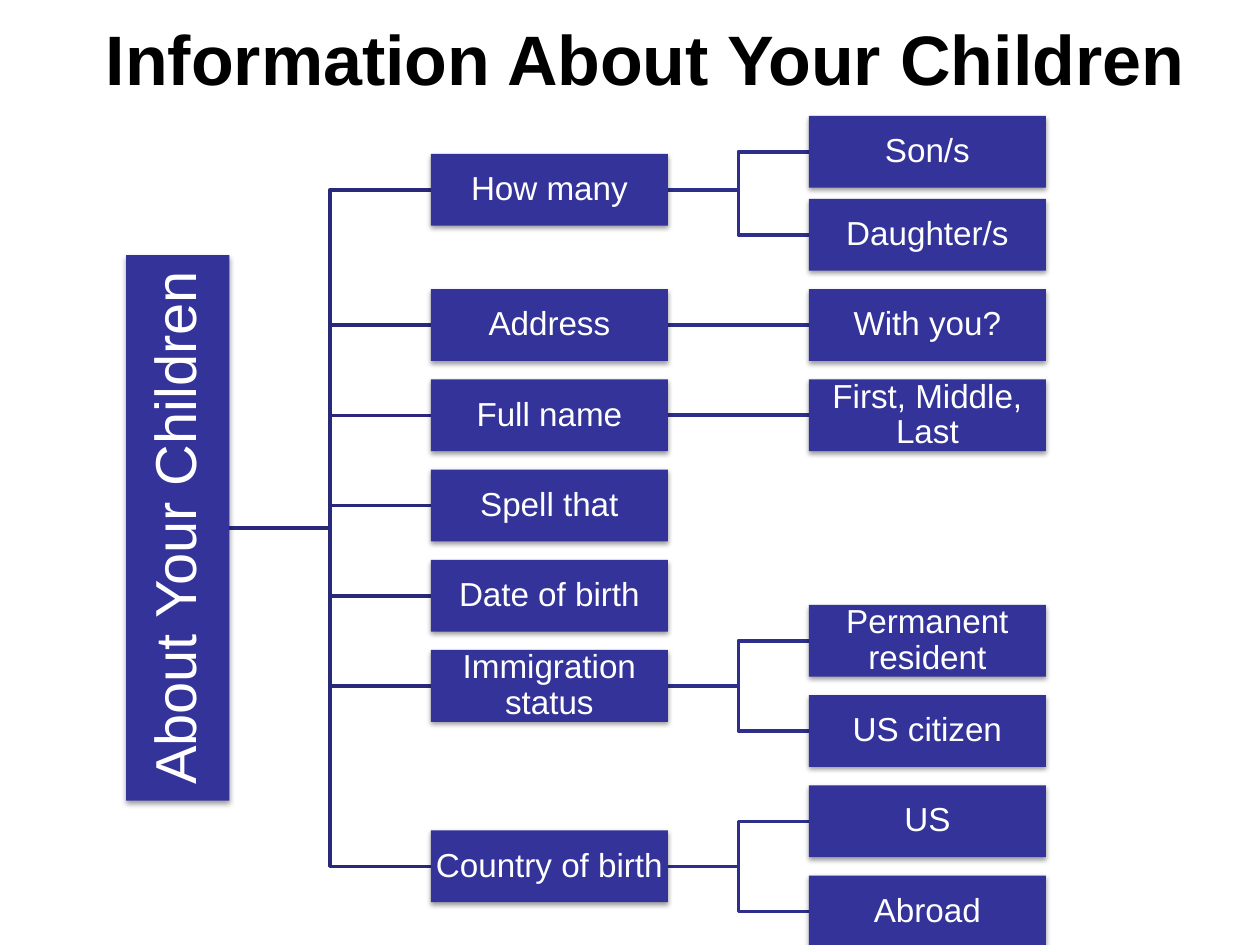
from lxml import etree
from pptx import Presentation
from pptx import util as u
from pptx.dml.color import RGBColor
from pptx.enum import shapes, text
from pptx.oxml.ns import qn

BLACK = RGBColor(0x00, 0x00, 0x00)
WHITE = RGBColor(0xFF, 0xFF, 0xFF)
INDIGO = RGBColor(0x33, 0x33, 0x99)
TRUNK_LINE = RGBColor(0x29, 0x29, 0x7B)
LEAF_LINE = RGBColor(0x2E, 0x2E, 0x8B)

# Columns and rows of the tree
NODE_WIDTH, NODE_HEIGHT = 1.88, 0.57
BRANCH_LEFT, LEAF_LEFT = 3.42, 6.42
FIRST_ROW, ROW_PITCH = 2.58, 0.72 - 0.004
ROOT_X, ROOT_Y = 1.41, 4.19
ROOT_LENGTH, ROOT_THICKNESS = 4.33, 0.82

# Each branch: label, row, leaves with their rows
BRANCHES = [
    ("How many", -1.5, [("Son/s", -1.92), ("Daughter/s", -1)]),
    ("Address", 0, [("With you?", 0)]),
    ("Full name", 1, [("First, Middle, Last", 1)]),
    ("Spell that", 2, []),
    ("Date of birth", 3, []),
    ("Immigration status", 4, [("Permanent resident", 3.5), ("US citizen", 4.5)]),
    ("Country of birth", 6, [("US", 5.5), ("Abroad", 6.5)]),
]


def write(frame, words, size, color, bold=False, inset=0.01, spacing=1.0):
    """Fill a text frame with one centred paragraph."""
    frame.word_wrap = True
    frame.vertical_anchor = text.MSO_ANCHOR.MIDDLE
    frame.margin_left = frame.margin_right = u.Inches(inset)
    frame.margin_top = frame.margin_bottom = u.Inches(inset)
    para = frame.paragraphs[0]
    para.alignment = text.PP_ALIGN.CENTER
    para.line_spacing = spacing
    span = para.add_run()
    span.text = words
    span.font.name = "Arial"
    span.font.size = u.Pt(size)
    span.font.bold = bold
    span.font.color.rgb = color


def row_center(row):
    return FIRST_ROW + row * ROW_PITCH


class TreeSlide:
    """Style of the tree and the page it is drawn on."""

    fill = INDIGO
    line_width = u.Pt(2)

    def __init__(self, page):
        self.page = page

    def title(self, words):
        box = self.page.shapes.add_textbox(
            u.Inches(0.58), u.Inches(-0.17), u.Inches(9.08), u.Inches(1.25))
        write(box.text_frame, words, 40, BLACK, bold=True, inset=0.1)

    def node(self, words, left, center, width=NODE_WIDTH, height=NODE_HEIGHT,
             size=19, inset=0.01, rotation=0):
        box = self.page.shapes.add_shape(
            shapes.MSO_SHAPE.RECTANGLE, u.Inches(left),
            u.Inches(center - height / 2), u.Inches(width), u.Inches(height))
        box.rotation = rotation
        box.fill.solid()
        box.fill.fore_color.rgb = self.fill
        box.line.fill.background()
        self.soft_shadow(box)
        write(box.text_frame, words, size, WHITE, inset=inset, spacing=0.9)

    def soft_shadow(self, box):
        box.shadow.inherit = False
        effects = box._element.spPr.find(qn("a:effectLst"))
        shadow = etree.SubElement(
            effects, qn("a:outerShdw"), blurRad=str(u.Pt(3.1)),
            dist=str(u.Pt(1.6)), dir="5400000", rotWithShape="0")
        color = etree.SubElement(shadow, qn("a:srgbClr"), val=str(BLACK))
        etree.SubElement(color, qn("a:alpha"), val="38000")

    def link(self, start_x, start_y, end_x, end_y, color):
        """Join two nodes: straight on one level, otherwise with two bends."""
        x1, y1, x2, y2 = map(u.Inches, (start_x, start_y, end_x, end_y))
        if y1 == y2:
            line = self.page.shapes.add_connector(
                shapes.MSO_CONNECTOR.STRAIGHT, x1, y1, x2, y2)
            etree.SubElement(line._element.spPr, qn("a:effectLst"))
        else:
            middle = (x1 + x2) // 2
            builder = self.page.shapes.build_freeform(x1, y1)
            builder.add_line_segments(
                [(middle, y1), (middle, y2), (x2, y2)], close=False)
            line = builder.convert_to_shape()
            line.fill.background()
            line.shadow.inherit = False
        line.line.color.rgb = color
        line.line.width = self.line_width


def main():
    deck = Presentation()
    deck.slide_width, deck.slide_height = u.Inches(10), u.Inches(7.5)
    tree = TreeSlide(deck.slides.add_slide(deck.slide_layouts[6]))
    tree.title("Information About Your Children")

    # Links, behind the nodes
    for _, row, leaves in BRANCHES:
        center = row_center(row)
        tree.link(ROOT_X + ROOT_THICKNESS / 2, ROOT_Y, BRANCH_LEFT, center, TRUNK_LINE)
        for _, leaf_row in leaves:
            tree.link(BRANCH_LEFT + NODE_WIDTH, center,
                      LEAF_LEFT, row_center(leaf_row), LEAF_LINE)

    # Root, turned to read upwards
    tree.node("About Your Children", ROOT_X - ROOT_LENGTH / 2, ROOT_Y,
              ROOT_LENGTH, ROOT_THICKNESS, size=33, inset=0.02, rotation=270)

    # Branches and leaves
    for label, row, leaves in BRANCHES:
        tree.node(label, BRANCH_LEFT, row_center(row))
        for leaf, leaf_row in leaves:
            tree.node(leaf, LEAF_LEFT, row_center(leaf_row))

    deck.save("out.pptx")


if __name__ == "__main__":
    main()
